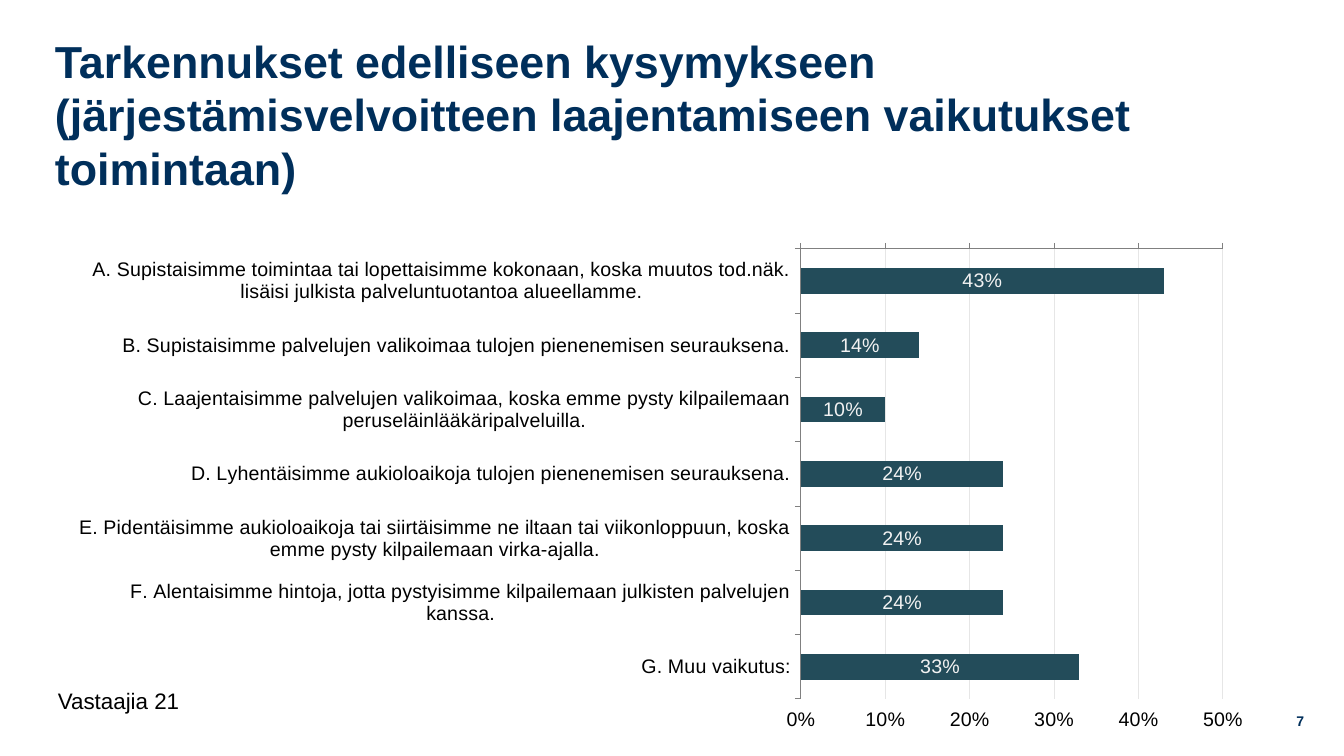
from lxml import etree
from pptx import Presentation, util as u
from pptx.chart.data import CategoryChartData
from pptx.dml.color import RGBColor
from pptx.enum import chart as ch, text
from pptx.oxml import parse_xml
from pptx.oxml.ns import nsdecls

NAVY = RGBColor(0x00, 0x2F, 0x5B)
TEAL = RGBColor(0x23, 0x4C, 0x5A)
BLACK = RGBColor(0x00, 0x00, 0x00)
WHITE = RGBColor(0xFF, 0xFF, 0xFF)
PALE = RGBColor(0xF2, 0xF2, 0xF2)
GRID = RGBColor(0xE6, 0xE6, 0xE6)
GRAY = RGBColor(0x80, 0x80, 0x80)
FONT = "Arial"

LEFT, RIGHT = text.PP_ALIGN.LEFT, text.PP_ALIGN.RIGHT
TEXTS = [
    ("Tarkennukset edelliseen kysymykseen (järjestämisvelvoitteen laajentamiseen vaikutukset toimintaan)",
     (45, 41, 1159, 146), 32, NAVY, True, LEFT),
    ("7", (1012, 701, 302, 40), 10, NAVY, True, RIGHT),
    ("Vastaajia 21", (48, 682, 150, 37), 16, BLACK, False, LEFT),
]
ANSWERS = [
    ("A. Supistaisimme toimintaa tai lopettaisimme kokonaan, koska muutos tod.näk. lisäisi julkista palveluntuotantoa alueellamme.", 0.43),
    ("B. Supistaisimme palvelujen valikoimaa tulojen pienenemisen seurauksena.", 0.14),
    ("C. Laajentaisimme palvelujen valikoimaa, koska emme pysty kilpailemaan peruseläinlääkäripalveluilla.", 0.10),
    ("D. Lyhentäisimme aukioloaikoja tulojen pienenemisen seurauksena.", 0.24),
    ("E. Pidentäisimme aukioloaikoja tai siirtäisimme ne iltaan tai viikonloppuun, koska emme pysty kilpailemaan virka-ajalla.", 0.24),
    ("F. Alentaisimme hintoja, jotta pystyisimme kilpailemaan julkisten palvelujen kanssa.", 0.24),
    ("G. Muu vaikutus:", 0.33),
]
CHART = (69, 239, 1199, 502)
PLOT = (801, 249, 422, 450)


def px(n):
    return u.Emu(round(n * 914400 / 100.8))


def style(font, size, color, bold=False):
    font.name, font.size, font.bold = FONT, u.Pt(size), bold
    font.color.rgb = color


def add_text(s, words, box, size, color, bold, align):
    tf = s.shapes.add_textbox(*map(px, box)).text_frame
    tf.word_wrap = True
    tf.vertical_anchor = text.MSO_ANCHOR.MIDDLE
    p = tf.paragraphs[0]
    p.alignment = align
    r = p.add_run()
    r.text = words
    style(r.font, size, color, bold)


def place_plot(chart):
    area = chart._chartSpace.chart.plotArea
    for old in area.findall("{*}layout"):
        area.remove(old)
    x, y, w, h = PLOT
    left, top, width, height = CHART
    parts = {"x": (x - left) / width, "y": (y - top) / height, "w": w / width, "h": h / height}
    modes = '<c:layoutTarget val="inner"/><c:xMode val="edge"/><c:yMode val="edge"/>'
    sizes = "".join(f'<c:{k} val="{v:.4f}"/>' for k, v in parts.items())
    area.insert(0, parse_xml(
        f'<c:layout {nsdecls("c")}><c:manualLayout>{modes}{sizes}</c:manualLayout></c:layout>'))
    area.append(parse_xml(
        f'<c:spPr {nsdecls("c", "a")}><a:solidFill><a:srgbClr val="{WHITE}"/></a:solidFill></c:spPr>'))


def add_bars(s):
    data = CategoryChartData(number_format="0%")
    data.categories = [name for name, _ in ANSWERS]
    data.add_series("Series 1", [value for _, value in ANSWERS])
    chart = s.shapes.add_chart(ch.XL_CHART_TYPE.BAR_CLUSTERED, *map(px, CHART), data).chart
    chart.has_legend = chart.has_title = False
    style(chart.font, 14, BLACK)
    cat, val = chart.category_axis, chart.value_axis
    for axis in (cat, val):
        axis.major_tick_mark = ch.XL_TICK_MARK.OUTSIDE
        axis.format.line.color.rgb = GRAY
        axis.format.line.width = u.Pt(0.75)
        style(axis.tick_labels.font, 14, BLACK)
    cat.reverse_order = True
    cat.has_major_gridlines = False
    val.minimum_scale, val.maximum_scale, val.major_unit = 0, 0.5, 0.1
    val.tick_label_position = ch.XL_TICK_LABEL_POSITION.HIGH
    val.tick_labels.number_format = "0%"
    val.tick_labels.number_format_is_linked = False
    val.major_gridlines.format.line.color.rgb = GRID
    val.major_gridlines.format.line.width = u.Pt(0.75)
    plot = chart.plots[0]
    plot.gap_width = 150
    plot.vary_by_categories = False
    fill = plot.series[0].format.fill
    fill.solid()
    fill.fore_color.rgb = TEAL
    plot.has_data_labels = True
    labels = plot.data_labels
    labels.show_value = True
    labels.position = ch.XL_LABEL_POSITION.CENTER
    labels.number_format = "0%"
    labels.number_format_is_linked = False
    style(labels.font, 14, PALE)
    place_plot(chart)


def main():
    prs = Presentation()
    prs.slide_width, prs.slide_height = px(1344), px(756)
    s = prs.slides.add_slide(prs.slide_layouts[6])
    add_bars(s)
    for item in TEXTS:
        add_text(s, *item)
    prs.save("out.pptx")


if __name__ == "__main__":
    main()
